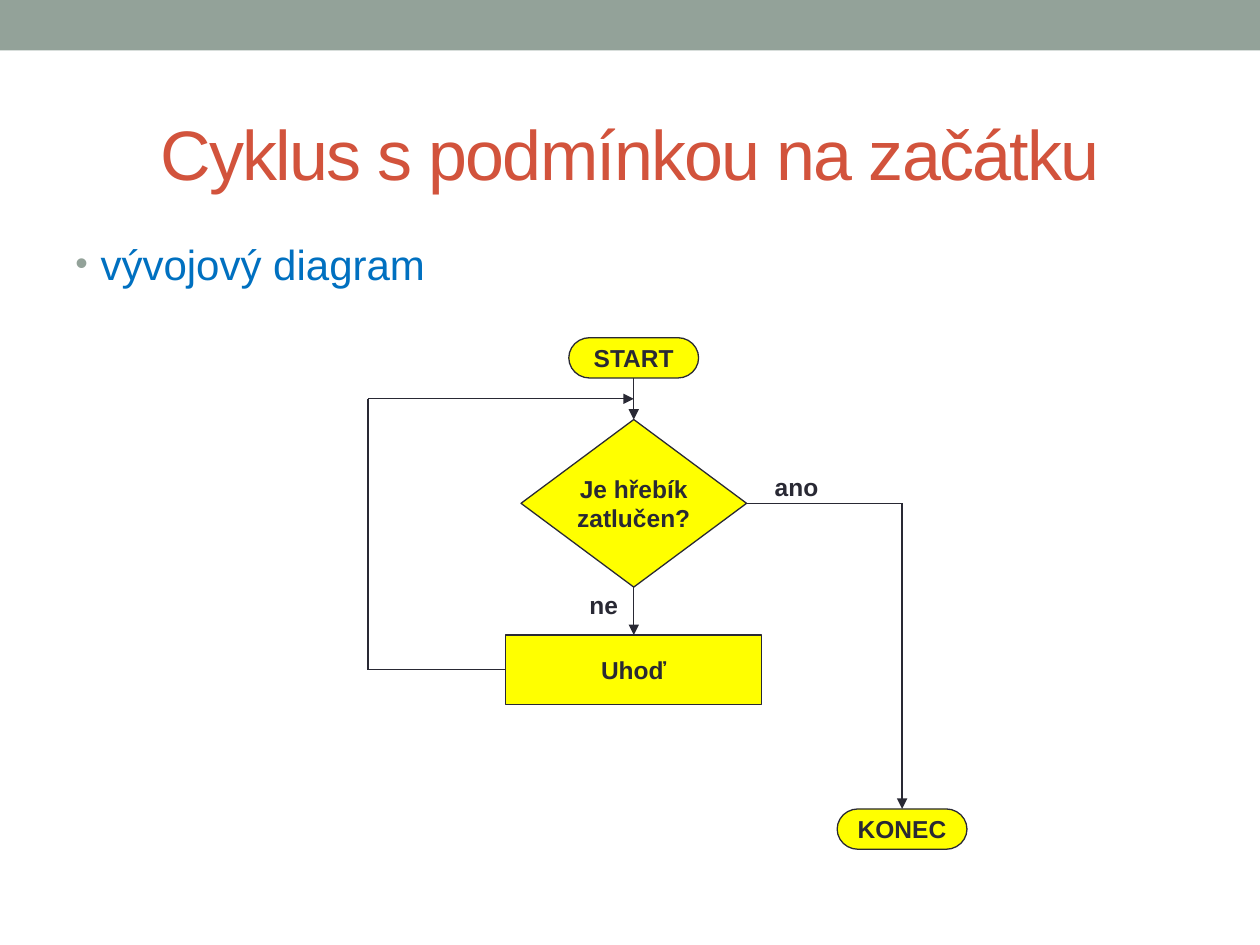
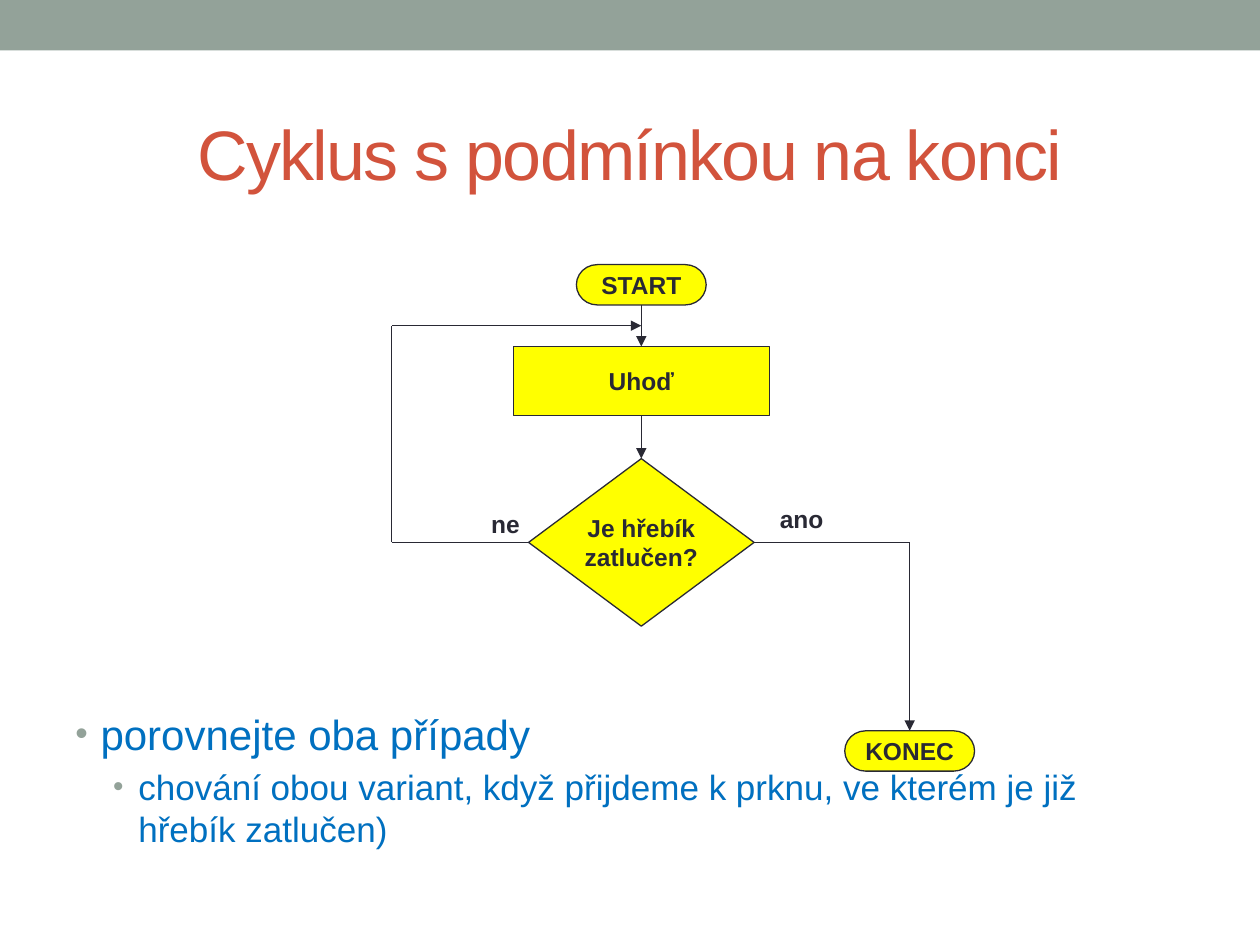
from dataclasses import dataclass
from lxml import etree
from pptx import Presentation
from pptx.dml.color import RGBColor
from pptx.enum.shapes import MSO_CONNECTOR, MSO_SHAPE
from pptx.enum.text import MSO_ANCHOR, MSO_AUTO_SIZE, PP_ALIGN
from pptx.oxml.ns import qn
from pptx.util import Inches, Pt

LINE = MSO_CONNECTOR.STRAIGHT
RECT = MSO_SHAPE.RECTANGLE
MIDDLE = MSO_ANCHOR.MIDDLE
TOP_EDGE = MSO_ANCHOR.TOP
CENTER, LEFT_AL = PP_ALIGN.CENTER, PP_ALIGN.LEFT
GROW = MSO_AUTO_SIZE.SHAPE_TO_FIT_TEXT
TOP, LEFT, BOTTOM, RIGHT = range(4)


@dataclass(frozen=True)
class Theme:
    font: str = "Arial"
    band: str = "93A299"
    title: str = "D2533C"
    body: str = "0070C0"
    node: str = "FFFF00"
    ink: str = "292934"
    title_size: int = 40
    body_sizes: tuple = (24, 20)
    flow_size: int = 14
    line: float = 0.75


THEME = Theme()
WIDE, HIGH = 10, 7.5
MARGIN = WIDE * 0.05
INNER = WIDE - 2 * MARGIN
END_SHIFT = 2.13

# Node kinds: preset shape, width, height
KINDS = {
    "pill": (MSO_SHAPE.FLOWCHART_TERMINATOR, 1.03, 0.32),
    "step": (MSO_SHAPE.FLOWCHART_PROCESS, 2.03, 0.55),
    "test": (MSO_SHAPE.FLOWCHART_DECISION, 1.79, 1.33),
}
WORDS = {
    "start": ("pill", ["START"]),
    "end": ("pill", ["KONEC"]),
    "step": ("step", ["Uhoď"]),
    "test": ("test", ["Je hřebík", "zatlučen?"]),
}

# Content: the chain runs down the axis, its last node loops back
SLIDES = [
    {
        "title": "Cyklus s podmínkou na začátku",
        "body": [(0, "vývojový diagram")],
        "body_top": 1.84,
        "axis": 5.03,
        "top": 2.68,
        "chain": [("start", 0.33), ("test", 0.38), ("step", 0)],
        "end_top": 6.42,
        "loop": 2.92,
        "labels": [("ne", 4.58, 4.63, 0.43), ("ano", 6.05, 3.7, 0.55)],
    },
    {
        "title": "Cyklus s podmínkou na konci",
        "body": [
            (0, "porovnejte oba případy"),
            (1, "chování obou variant, když přijdeme k prknu, "
                "ve kterém je již hřebík zatlučen)"),
        ],
        "body_top": 5.57,
        "axis": 5.09,
        "top": 2.1,
        "chain": [("start", 0.33), ("step", 0.34), ("test", 0)],
        "end_top": 5.8,
        "loop": 3.11,
        "labels": [("ne", 3.8, 3.99, 0.43), ("ano", 6.09, 3.95, 0.55)],
    },
]


def tint(code):
    return RGBColor.from_string(code)


def add_run(para, text, size, color, bold=False):
    run = para.add_run()
    run.text = text
    font = run.font
    font.name, font.size, font.bold = THEME.font, Pt(size), bold
    font.color.rgb = tint(color)
    return run


def add_shape(slide, kind, box, fill, edge=None):
    shape = slide.shapes.add_shape(kind, *map(Inches, box))
    shape.shadow.inherit = False
    shape.fill.solid()
    shape.fill.fore_color.rgb = tint(fill)
    if edge:
        shape.line.color.rgb = tint(edge)
        shape.line.width = Pt(THEME.line)
    else:
        shape.line.fill.background()
    return shape


def add_box(slide, box, anchor=TOP_EDGE, wrap=True):
    shape = slide.shapes.add_textbox(*map(Inches, box))
    frame = shape.text_frame
    frame.word_wrap = wrap
    frame.vertical_anchor = anchor
    return frame


# Shared frame: band and title
def add_frame(slide, title):
    add_shape(slide, RECT, (0, 0, WIDE, 0.4), THEME.band)
    frame = add_box(slide, (MARGIN, 0.58, INNER, 1.26), MIDDLE)
    para = frame.paragraphs[0]
    para.alignment = CENTER
    run = add_run(para, title, THEME.title_size, THEME.title)
    run.font._element.set("spc", "-100")


def add_bullet(para, level):
    props = para._p.get_or_add_pPr()
    props.set("marL", str(Inches(0.2 + 0.3 * level)))
    props.set("indent", str(Inches(-0.2)))
    color = etree.SubElement(props, qn("a:buClr"))
    etree.SubElement(color, qn("a:srgbClr"), val=THEME.band)
    etree.SubElement(props, qn("a:buSzPct"), val="85000")
    etree.SubElement(props, qn("a:buFont"), typeface=THEME.font)
    etree.SubElement(props, qn("a:buChar"), char="•")


def add_body(slide, items, top):
    frame = add_box(slide, (MARGIN, top, INNER, 7.08 - top))
    for i, (level, text) in enumerate(items):
        para = frame.add_paragraph() if i else frame.paragraphs[0]
        size = THEME.body_sizes[level]
        para.level = level
        para.space_before = Pt(size * 0.2)
        add_bullet(para, level)
        add_run(para, text, size, THEME.body)


# Flowchart parts
def add_words(frame, lines, align):
    for i, text in enumerate(lines):
        para = frame.add_paragraph() if i else frame.paragraphs[0]
        para.alignment = align
        add_run(para, text, THEME.flow_size, THEME.ink, True)


def add_node(slide, name, mid, top):
    kind, lines = WORDS[name]
    preset, wide, high = KINDS[kind]
    box = (mid - wide / 2, top, wide, high)
    shape = add_shape(slide, preset, box, THEME.node, THEME.ink)
    frame = shape.text_frame
    frame.word_wrap = False
    frame.vertical_anchor = MIDDLE
    add_words(frame, lines, CENTER)
    return shape


def site(node, side):
    x, y = node.left + node.width // 2, node.top + node.height // 2
    return {
        TOP: (x, node.top),
        LEFT: (node.left, y),
        BOTTOM: (x, node.top + node.height),
        RIGHT: (node.left + node.width, y),
    }[side]


def add_line(slide, first, last, arrow, begin=None, end=None):
    line = slide.shapes.add_connector(LINE, *first, *last)
    line.line.color.rgb = tint(THEME.ink)
    line.line.width = Pt(THEME.line)
    if arrow:
        etree.SubElement(line.line._get_or_add_ln(), qn("a:tailEnd"),
                         type="triangle")
    etree.SubElement(line._element.spPr, qn("a:effectLst"))
    if begin:
        line.begin_connect(*begin)
    if end:
        line.end_connect(*end)


def add_route(slide, begin, bends, end=None):
    """Draw straight legs through the bends, with the arrow on the last."""
    stops = [site(*begin), *bends] + ([site(*end)] if end else [])
    final = len(stops) - 2
    for i, (first, last) in enumerate(zip(stops, stops[1:])):
        add_line(slide, first, last, i == final,
                 begin if i == 0 else None, end if i == final else None)


def add_flow(slide, data):
    axis, top = data["axis"], data["top"]
    nodes = {}
    for name, gap in data["chain"]:
        nodes[name] = add_node(slide, name, axis, top)
        top += KINDS[WORDS[name][0]][2] + gap
    chain = list(nodes.values())
    end = add_node(slide, "end", axis + END_SHIFT, data["end_top"])

    # Down the axis
    for upper, lower in zip(chain, chain[1:]):
        add_route(slide, (upper, BOTTOM), [], (lower, TOP))

    # Out to the end
    test = nodes["test"]
    bend = (site(end, TOP)[0], site(test, RIGHT)[1])
    add_route(slide, (test, RIGHT), [bend], (end, TOP))

    # Back to the first gap
    turn = Inches(data["loop"])
    low = site(chain[-1], LEFT)[1]
    join = (site(chain[0], BOTTOM)[1] + chain[1].top) // 2
    add_route(slide, (chain[-1], LEFT),
              [(turn, low), (turn, join), (Inches(axis), join)])

    for text, x, y, wide in data["labels"]:
        frame = add_box(slide, (x, y, wide, 0.34), wrap=False)
        frame.auto_size = GROW
        add_words(frame, [text], LEFT_AL)


def main():
    deck = Presentation()
    deck.slide_width, deck.slide_height = Inches(WIDE), Inches(HIGH)
    for data in SLIDES:
        slide = deck.slides.add_slide(deck.slide_layouts[6])
        add_frame(slide, data["title"])
        add_body(slide, data["body"], data["body_top"])
        add_flow(slide, data)
    deck.save("out.pptx")


if __name__ == "__main__":
    main()
